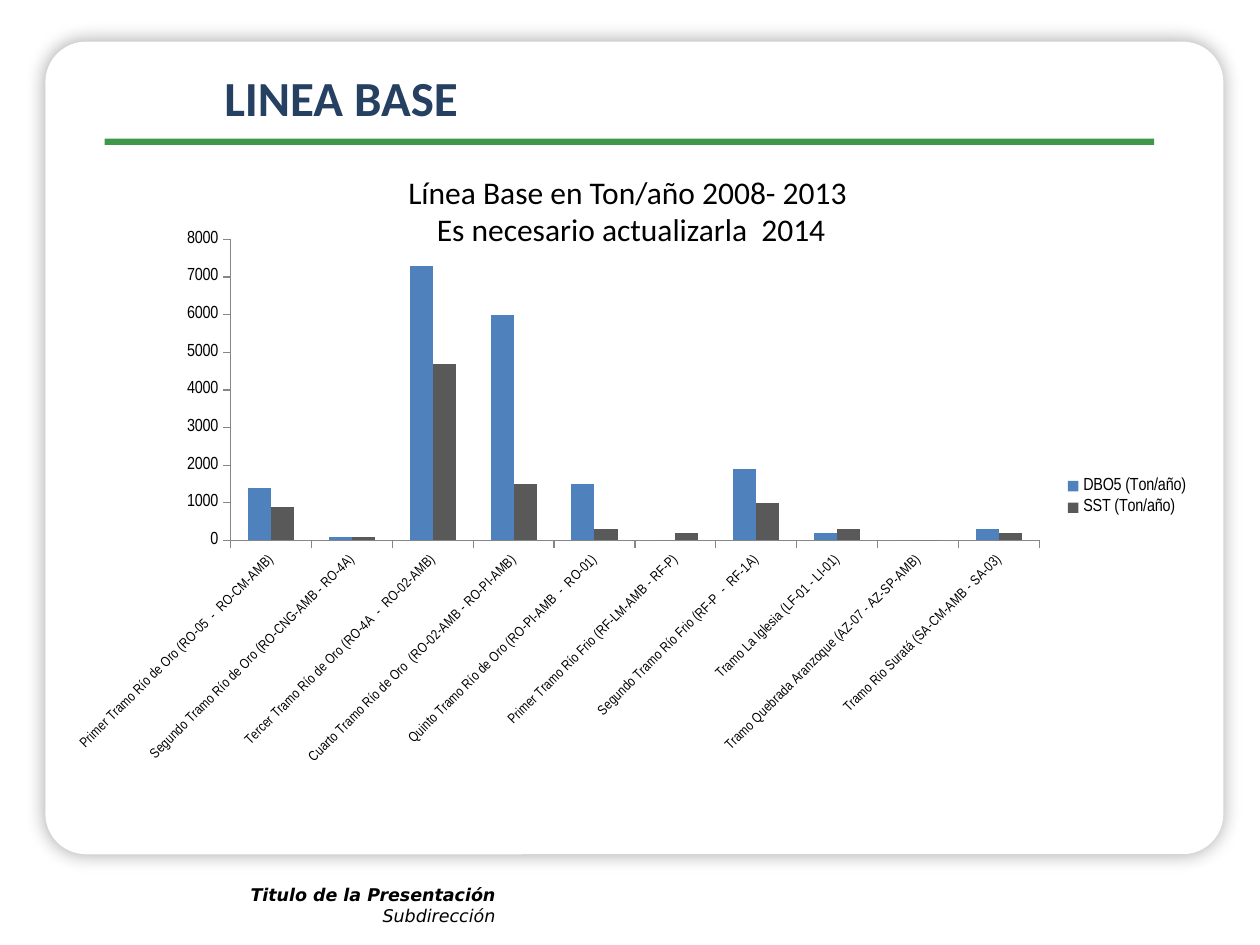
"""Build the LINEA BASE slide with its clustered column chart."""
import pptx
import pptx.util
import pptx.dml.color
import pptx.chart.data
import pptx.enum.chart
import pptx.enum.shapes
import pptx.enum.text
import pptx.oxml

Inches, Pt = pptx.util.Inches, pptx.util.Pt
PP_ALIGN = pptx.enum.text.PP_ALIGN
NS = ('xmlns:a="http://schemas.openxmlformats.org/drawingml/2006/main" '
      'xmlns:c="http://schemas.openxmlformats.org/drawingml/2006/chart"')
CHART_BOX = (0.44, 1.75, 9.1, 4.41)


def rgb(color):
    return pptx.dml.color.RGBColor.from_string(color)


def set_layout(parent, index, box, target=""):
    for old in parent.findall(pptx.oxml.ns.qn("c:layout")):
        parent.remove(old)
    left, top, width, height = CHART_BOX
    x, y, w, h = box
    parent.insert(index, pptx.oxml.parse_xml(
        f'<c:layout {NS}><c:manualLayout>{target}'
        '<c:xMode val="edge"/><c:yMode val="edge"/>'
        f'<c:x val="{(x - left) / width}"/><c:y val="{(y - top) / height}"/>'
        f'<c:w val="{w / width}"/><c:h val="{h / height}"/>'
        '</c:manualLayout></c:layout>'))


prs = pptx.Presentation()
prs.slide_width, prs.slide_height = Inches(10), Inches(7.5)
s = prs.slides.add_slide(prs.slide_layouts[5])
MSO_SHAPE = pptx.enum.shapes.MSO_SHAPE

for kind, box, color in [
    (MSO_SHAPE.ROUNDED_RECTANGLE, (0.36, 0.33, 9.35, 6.45), "FFFFFF"),
    (MSO_SHAPE.RECTANGLE, (0.83, 1.1, 8.33, 0.05), "3D9948"),
]:
    sp = s.shapes.add_shape(kind, *map(Inches, box))
    sp.shadow.inherit = False
    sp.fill.solid()
    sp.fill.fore_color.rgb = rgb(color)
    sp.line.fill.background()
    if kind == MSO_SHAPE.ROUNDED_RECTANGLE:
        sp.adjustments[0] = 0.05
        sp.element.spPr.find(pptx.oxml.ns.qn("a:effectLst")).append(pptx.oxml.parse_xml(
            f'<a:outerShdw {NS} blurRad="{Pt(10.8)}" dist="0" dir="5400000" algn="ctr" '
            'rotWithShape="0"><a:srgbClr val="000000"><a:alpha val="35000"/>'
            '</a:srgbClr></a:outerShdw>'))

title = s.shapes.title
title.left, title.top, title.width, title.height = map(Inches, (1.68, 0.5, 5.69, 0.54))
title.element.getparent().append(title.element)
tf = title.text_frame
tf.text = "LINEA BASE"
tf.vertical_anchor = pptx.enum.text.MSO_ANCHOR.MIDDLE
p = tf.paragraphs[0]
p.alignment = PP_ALIGN.LEFT
p.font.name, p.font.size, p.font.bold = "Calibri", Pt(28), True
p.font.color.rgb = rgb("254061")

data = pptx.chart.data.CategoryChartData()
data.categories = [
    "Primer Tramo Río de Oro (RO-05  -  RO-CM-AMB)",
    "Segundo Tramo Río de Oro (RO-CNG-AMB - RO-4A)",
    "Tercer Tramo Río de Oro (RO-4A  -  RO-02-AMB)",
    "Cuarto Tramo Río de Oro  (RO-02-AMB - RO-PI-AMB)",
    "Quinto Tramo Río de Oro (RO-PI-AMB  -  RO-01)",
    "Primer Tramo Río Frio (RF-LM-AMB - RF-P)",
    "Segundo Tramo Río Frio (RF-P  -  RF-1A)",
    "Tramo La Iglesia (LF-01 - LI-01)",
    "Tramo Quebrada Aranzoque (AZ-07 - AZ-SP-AMB)",
    "Tramo Rio Suratá (SA-CM-AMB - SA-03)",
]
data.add_series("DBO5 (Ton/año)", (1400, 100, 7300, 6000, 1500, 0, 1900, 200, 0, 300))
data.add_series("SST (Ton/año)", (900, 100, 4700, 1500, 300, 200, 1000, 300, 0, 200))
chart = s.shapes.add_chart(
    pptx.enum.chart.XL_CHART_TYPE.COLUMN_CLUSTERED,
    *map(Inches, CHART_BOX), data).chart
chart.has_title = False
chart.font.name, chart.font.size = "Arial Narrow", Pt(10)
chart.font.color.rgb = rgb("000000")

plot = chart.plots[0]
plot.vary_by_categories = False
plot.gap_width, plot.overlap = 150, 0
for series, color in zip(plot.series, ("4F81BD", "595959")):
    series.format.fill.solid()
    series.format.fill.fore_color.rgb = rgb(color)

for axis in (chart.category_axis, chart.value_axis):
    axis.has_major_gridlines = False
    axis.major_tick_mark = pptx.enum.chart.XL_TICK_MARK.OUTSIDE
    axis.minor_tick_mark = pptx.enum.chart.XL_TICK_MARK.NONE
    axis.format.line.color.rgb = rgb("868686")
    axis.format.line.width = Pt(0.75)
chart.value_axis.minimum_scale = 0
chart.value_axis.maximum_scale = 8000
chart.value_axis.major_unit = 1000
labels = chart.category_axis.tick_labels
labels.font.name, labels.font.size = "Arial Narrow", Pt(8)
labels.font.color.rgb = rgb("000000")
chart.category_axis._element.txPr.bodyPr.set("rot", "-2700000")

chart.has_legend = True
legend = chart.legend
legend.position = pptx.enum.chart.XL_LEGEND_POSITION.RIGHT
legend.include_in_layout = False
set_layout(chart._chartSpace.chart.plotArea, 0, (1.83, 1.9, 6.42, 2.39),
           '<c:layoutTarget val="inner"/>')
set_layout(legend._element, 1, (8.4, 3.75, 1.09, 0.39))

for box, lines, align, font, size, styled in [
    ((1.38, 1.32, 7.26, 0.71),
     ("Línea Base en Ton/año 2008- 2013 ", "Es necesario actualizarla  2014"),
     PP_ALIGN.CENTER, "Calibri", 18, False),
    ((0.8, 6.97, 3.23, 0.44), ("Titulo de la Presentación", "Subdirección"),
     PP_ALIGN.RIGHT, "DejaVu Sans", 10, True),
]:
    tf = s.shapes.add_textbox(*map(Inches, box)).text_frame
    tf.word_wrap = True
    tf.text = "\n".join(lines)
    for i, p in enumerate(tf.paragraphs):
        p.alignment = align
        p.font.name, p.font.size = font, Pt(size)
        p.font.bold, p.font.italic = styled and i == 0, styled
        p.font.color.rgb = rgb("000000")

prs.save("out.pptx")
